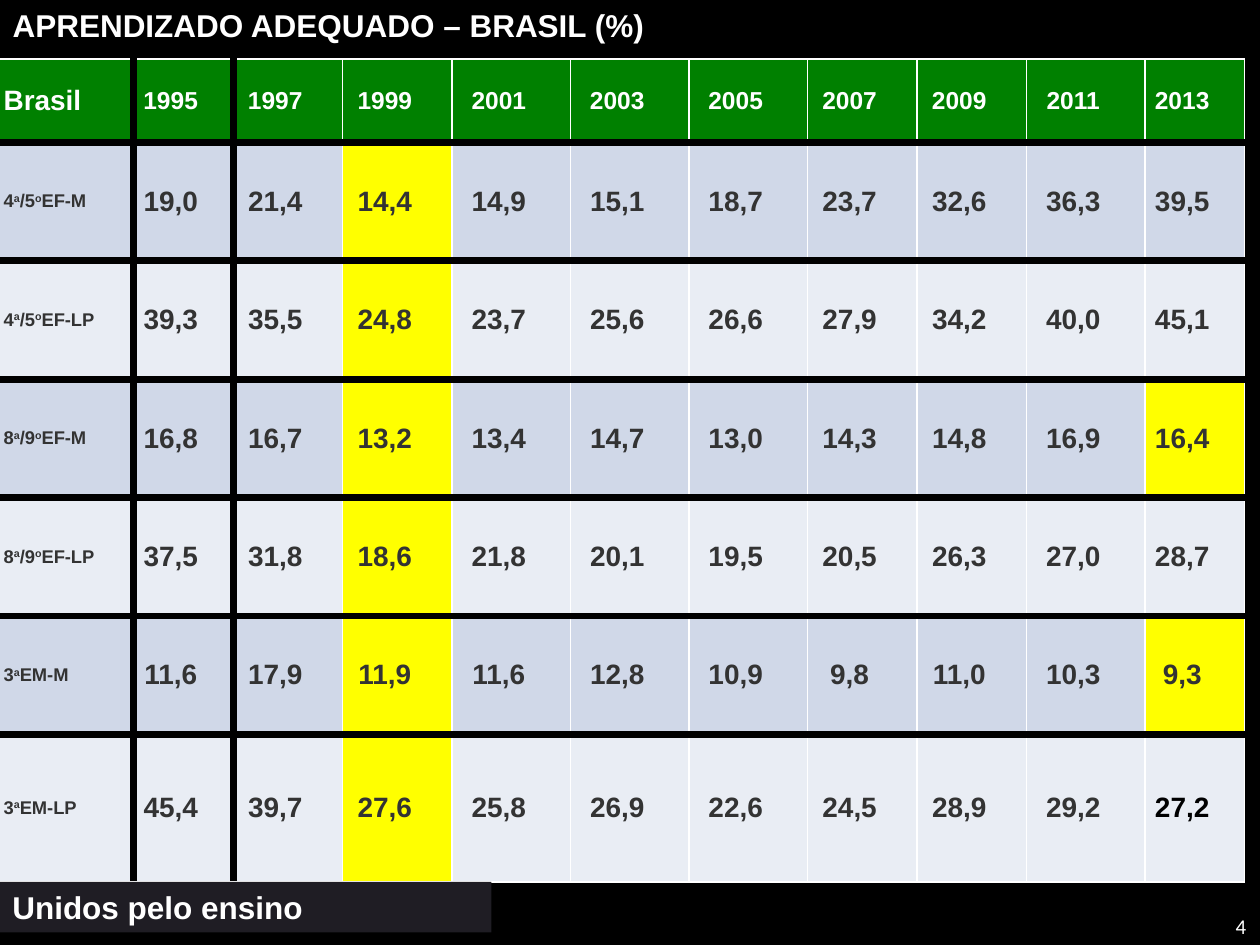
from dataclasses import dataclass
from typing import Optional

from lxml.etree import SubElement
from pptx import Presentation
from pptx.dml.color import RGBColor
from pptx.enum.shapes import MSO_SHAPE
from pptx.enum.text import MSO_ANCHOR, PP_ALIGN
from pptx.oxml.ns import qn
from pptx.util import Inches, Pt

BLACK, WHITE, YELLOW, GREEN = "000000", "FFFFFF", "FFFF00", "008000"
BANDS = ("D0D8E8", "E9EDF4")
GREY, BAR = "333333", "1F1D24"
YEARS = ["1995", "1997", "1999", "2001", "2003", "2005", "2007", "2009", "2011", "2013"]
COLUMN_WIDTHS = [1.1, 0.79, 0.87, 0.87, 0.94, 0.94, 0.94, 0.87, 0.87, 0.94, 0.79]
ROW_HEIGHTS = [0.66] + [0.94] * 5 + [1.17]
THICK_COLUMN_EDGES = {1, 2}
THICK_ROW_EDGES = set(range(1, len(ROW_HEIGHTS)))


@dataclass
class Stage:
    """A school stage; every second part of its label is superscript."""
    label: list[str]
    values: str
    highlights: tuple[str, ...] = ("1999",)


@dataclass
class TextStyle:
    """The look of a piece of text."""
    size: float
    color: str = WHITE
    bold: bool = True
    font: str = "Arial"
    align: Optional[PP_ALIGN] = PP_ALIGN.LEFT


STAGES = [
    Stage(["4", "a", "/5", "o", "EF-M"], "19,0 21,4 14,4 14,9 15,1 18,7 23,7 32,6 36,3 39,5"),
    Stage(["4", "a", "/5", "o", "EF-LP"], "39,3 35,5 24,8 23,7 25,6 26,6 27,9 34,2 40,0 45,1"),
    Stage(["8", "a", "/9", "o", "EF-M"], "16,8 16,7 13,2 13,4 14,7 13,0 14,3 14,8 16,9 16,4",
          ("1999", "2013")),
    Stage(["8", "a", "/9", "o", "EF-LP"], "37,5 31,8 18,6 21,8 20,1 19,5 20,5 26,3 27,0 28,7"),
    Stage(["3", "a", "EM-M"], "11,6 17,9 11,9 11,6 12,8 10,9 9,8 11,0 10,3 9,3",
          ("1999", "2013")),
    Stage(["3", "a", "EM-LP"], "45,4 39,7 27,6 25,8 26,9 22,6 24,5 28,9 29,2 27,2"),
]


def paint(fill, color: str) -> None:
    """Fill solidly with a hex colour."""
    fill.solid()
    fill.fore_color.rgb = RGBColor.from_string(color)


def write(frame, parts: list[str], style: TextStyle) -> None:
    """Write one paragraph whose odd parts are superscript."""
    frame.word_wrap = True
    frame.vertical_anchor = MSO_ANCHOR.MIDDLE
    para = frame.paragraphs[0]
    para.alignment = style.align
    for index, part in enumerate(parts):
        span = para.add_run()
        span.text = part
        span.font.size = Pt(style.size)
        span.font.name = style.font
        span.font.bold = style.bold
        span.font.color.rgb = RGBColor.from_string(style.color)
        if index % 2:
            span.font._element.set("baseline", "30000")


def draw_borders(cell, row: int, column: int) -> None:
    """Draw heavy black lines on the marked edges and thin white ones elsewhere."""
    sides = {
        "a:lnL": column in THICK_COLUMN_EDGES,
        "a:lnR": column + 1 in THICK_COLUMN_EDGES,
        "a:lnT": row in THICK_ROW_EDGES,
        "a:lnB": row + 1 in THICK_ROW_EDGES,
    }
    properties = cell._tc.get_or_add_tcPr()
    for tag, thick in sides.items():
        line = SubElement(properties, qn(tag), w=str(Pt(4.5 if thick else 1)))
        solid = SubElement(line, qn("a:solidFill"))
        SubElement(solid, qn("a:srgbClr"), val=BLACK if thick else WHITE)


def fill_cell(table, row: int, column: int, parts: list[str], color: str, style: TextStyle) -> None:
    """Write and format one table cell."""
    cell = table.cell(row, column)
    cell.margin_top = cell.margin_bottom = 0
    cell.margin_left = Inches(0 if column else 0.07)
    cell.margin_right = Inches(0.2 if column else 0.07)
    cell.vertical_anchor = MSO_ANCHOR.MIDDLE
    draw_borders(cell, row, column)
    paint(cell.fill, color)
    write(cell.text_frame, parts, style)
    style_align = PP_ALIGN.CENTER if column else PP_ALIGN.JUSTIFY
    cell.text_frame.paragraphs[0].alignment = style_align


def add_results(page) -> None:
    """Add the table of results by stage and year."""
    table = page.shapes.add_table(
        len(ROW_HEIGHTS), len(COLUMN_WIDTHS), Inches(-0.04), Inches(0.47),
        Inches(sum(COLUMN_WIDTHS)), Inches(sum(ROW_HEIGHTS))).table
    for column, width in zip(table.columns, COLUMN_WIDTHS):
        column.width = Inches(width)
    for row, height in zip(table.rows, ROW_HEIGHTS):
        row.height = Inches(height)
    fill_cell(table, 0, 0, ["Brasil"], GREEN, TextStyle(16))
    for column, year in enumerate(YEARS, 1):
        fill_cell(table, 0, column, [year], GREEN, TextStyle(14))
    for row, stage in enumerate(STAGES, 1):
        band = BANDS[(row - 1) % 2]
        fill_cell(table, row, 0, stage.label, band, TextStyle(10.5, GREY))
        for column, (year, value) in enumerate(zip(YEARS, stage.values.split()), 1):
            is_last = row == len(STAGES) and column == len(YEARS)
            fill_cell(table, row, column, [value],
                      YELLOW if year in stage.highlights else band,
                      TextStyle(16, BLACK if is_last else GREY))


def place(box, left: float, top: float, width: float, height: float) -> None:
    """Move and size a box."""
    box.left, box.top = Inches(left), Inches(top)
    box.width, box.height = Inches(width), Inches(height)


def main() -> None:
    """Build the slide and save it."""
    deck = Presentation()
    deck.slide_width, deck.slide_height = Inches(10), Inches(7.5)
    page = deck.slides.add_slide(deck.slide_layouts[5])
    paint(page.background.fill, BLACK)

    title = page.shapes.title
    place(title, 0, 0, 6.5, 0.4)
    paint(title.fill, BLACK)
    write(title.text_frame, ["APRENDIZADO ADEQUADO – BRASIL (%)"], TextStyle(18))

    add_results(page)

    source = page.shapes.add_shape(
        MSO_SHAPE.RECTANGLE, Inches(0), Inches(7), Inches(3.9), Inches(0.4))
    source.shadow.inherit = False
    source.line.fill.background()
    paint(source.fill, BAR)
    write(source.text_frame, ["Unidos pelo ensino"], TextStyle(18))

    number = page.shapes.add_textbox(Inches(9.49), Inches(7.2), Inches(0.5), Inches(0.3))
    write(number.text_frame, ["4"], TextStyle(12, WHITE, False, "Calibri", PP_ALIGN.RIGHT))

    deck.save("out.pptx")


if __name__ == "__main__":
    main()
